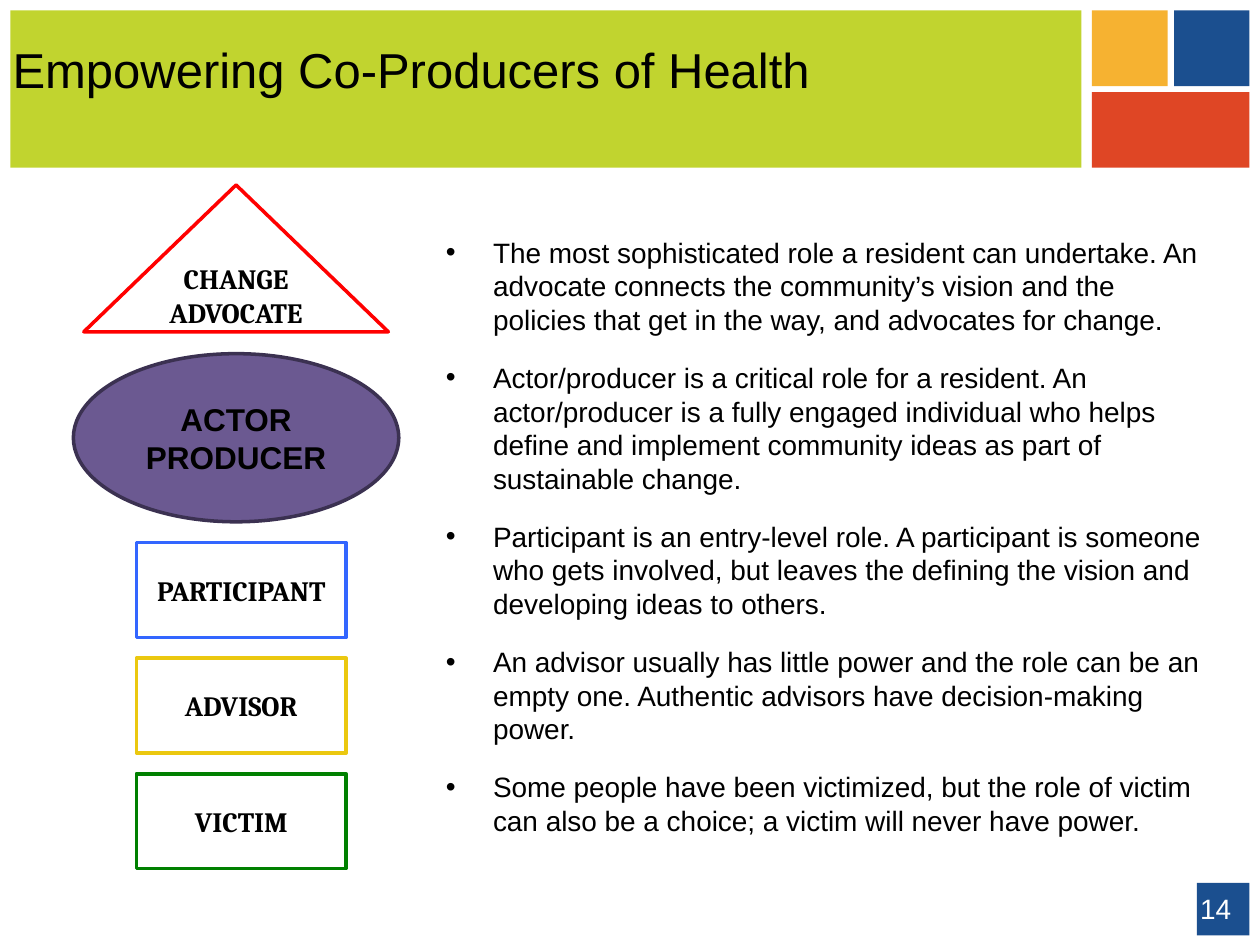
import pptx
import pptx.util
import pptx.dml.color
import pptx.enum.shapes
import pptx.enum.text
import pptx.oxml

Cm = pptx.util.Cm
Pt = pptx.util.Pt
SHAPE = pptx.enum.shapes.MSO_SHAPE
ALIGN = pptx.enum.text.PP_ALIGN
ANCHOR = pptx.enum.text.MSO_ANCHOR

BANDS = [
    (0.21, 0.21, 21.59, 3.17, "C1D42F"),
    (24.13, 17.8, 1.06, 1.06, "1B4F8F"),
    (22.01, 0.21, 1.53, 1.53, "F6B231"),
    (22.01, 1.86, 3.18, 1.52, "DF4625"),
    (23.67, 0.21, 1.52, 1.53, "1B4F8F"),
]
BOXED_ROLES = [("PARTICIPANT", "3366FF"), ("ADVISOR", "EBC810"), ("VICTIM", "008000")]
BOX_TOP, BOX_PITCH = 10.94, 2.33
DESCRIPTIONS = [
    "The most sophisticated role a resident can undertake. An advocate connects the "
    "community’s vision and the policies that get in the way, and advocates for change.",
    "Actor/producer is a critical role for a resident. An actor/producer is a fully engaged "
    "individual who helps define and implement community ideas as part of sustainable change.",
    "Participant is an entry-level role. A participant is someone who gets involved, but "
    "leaves the defining the vision and developing ideas to others.",
    "An advisor usually has little power and the role can be an empty one. Authentic "
    "advisors have decision-making power.",
    "Some people have been victimized, but the role of victim can also be a choice; "
    "a victim will never have power.",
]


def rgb(value):
    """Return the colour for a hex string."""
    return pptx.dml.color.RGBColor.from_string(value)


def place(box, left, top, width, height):
    """Set the position and size of a box in centimetres."""
    box.left, box.top, box.width, box.height = map(Cm, (left, top, width, height))


def add_span(para, text, size, font="Arial", color="000000", bold=False):
    """Add one formatted run to a paragraph."""
    span = para.add_run()
    span.text = text
    span.font.size = Pt(size)
    span.font.name = font
    span.font.bold = bold
    span.font.color.rgb = rgb(color)


def next_para(frame, index):
    """Return the first paragraph of a frame, or a new one after it."""
    return frame.add_paragraph() if index else frame.paragraphs[0]


def add_block(page, kind, bounds, fill, line=None):
    """Add a filled shape with an optional outline."""
    block = page.shapes.add_shape(kind, *map(Cm, bounds))
    block.shadow.inherit = False
    block.fill.solid()
    block.fill.fore_color.rgb = rgb(fill)
    if line:
        block.line.color.rgb = rgb(line)
        block.line.width = Pt(2)
    else:
        block.line.fill.background()
    return block


def add_role(page, kind, bounds, words, line, fill="FFFFFF", font="Cambria", size=16):
    """Add an outlined role shape with one centred paragraph per word."""
    frame = add_block(page, kind, bounds, fill, line).text_frame
    frame.word_wrap = False
    frame.vertical_anchor = ANCHOR.MIDDLE
    for index, word in enumerate(words):
        para = next_para(frame, index)
        para.alignment = ALIGN.CENTER
        add_span(para, word, size, font, bold=True)


def set_title(page, text):
    """Move, format and fill the title placeholder."""
    box = page.shapes.title
    place(box, 0, 0.66, 25.4, 1.45)
    frame = box.text_frame
    frame.word_wrap = True
    frame.auto_size = pptx.enum.text.MSO_AUTO_SIZE.NONE
    frame.vertical_anchor = ANCHOR.TOP
    para = frame.paragraphs[0]
    para.alignment = ALIGN.LEFT
    add_span(para, text, 28)


def set_bullet(para):
    """Give a paragraph a hanging round bullet."""
    properties = para._p.get_or_add_pPr()
    properties.set("marL", str(Cm(0.95)))
    properties.set("indent", str(-Cm(0.95)))
    namespace = pptx.oxml.ns.nsdecls("a")
    properties.append(pptx.oxml.parse_xml(f'<a:buFont {namespace} typeface="Arial"/>'))
    properties.append(pptx.oxml.parse_xml(f'<a:buChar {namespace} char="•"/>'))


def add_descriptions(page):
    """Add the bulleted role descriptions."""
    box = page.shapes.add_textbox(Cm(8.74), Cm(4.62), Cm(15.77), Cm(12.65))
    frame = box.text_frame
    frame.word_wrap = True
    for index, text in enumerate(DESCRIPTIONS):
        para = next_para(frame, index)
        para.space_before = Pt(14 if index else 3.2)
        set_bullet(para)
        add_span(para, text, 16)


def add_page_number(page, number):
    """Add the page number in the lower right corner."""
    box = page.shapes.add_textbox(Cm(19.15), Cm(17.8), Cm(5.92), Cm(1.02))
    frame = box.text_frame
    frame.word_wrap = True
    frame.vertical_anchor = ANCHOR.MIDDLE
    para = frame.paragraphs[0]
    para.alignment = ALIGN.RIGHT
    add_span(para, number, 16, color="FFFFFF")


def main():
    """Build and save the slide."""
    deck = pptx.Presentation()
    deck.slide_width, deck.slide_height = Cm(25.4), Cm(19.05)
    page = deck.slides.add_slide(deck.slide_layouts[5])
    for *bounds, fill in BANDS:
        add_block(page, SHAPE.RECTANGLE, bounds, fill)
    set_title(page, "Empowering Co-Producers of Health")
    title = page.shapes.title._element
    title.getparent().append(title)
    add_page_number(page, "14")
    add_descriptions(page)
    add_role(page, SHAPE.ISOSCELES_TRIANGLE, (1.69, 3.73, 6.14, 2.96),
             ["CHANGE", "ADVOCATE"], "FF0000")
    add_role(page, SHAPE.OVAL, (1.48, 7.13, 6.56, 3.39),
             ["ACTOR", "PRODUCER"], "3B3151", "6B5991", "Arial", 18)
    for index, (word, line) in enumerate(BOXED_ROLES):
        top = BOX_TOP + index * BOX_PITCH
        add_role(page, SHAPE.RECTANGLE, (2.75, top, 4.23, 1.91), [word], line)
    deck.save("out.pptx")


if __name__ == "__main__":
    main()
